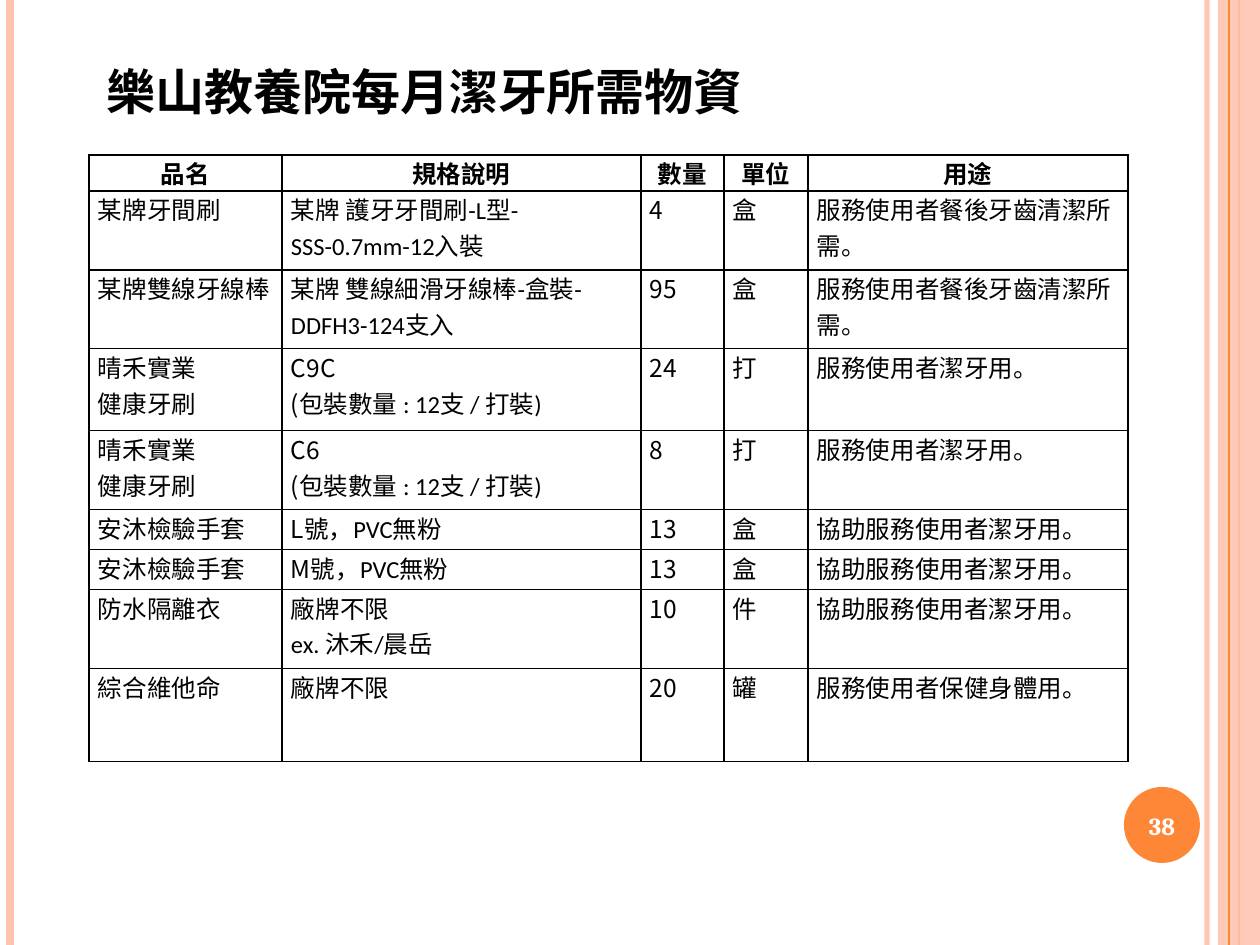
import pptx
import pptx.util
import pptx.dml.color
import pptx.enum.shapes
import pptx.enum.text
import pptx.oxml.ns
import lxml.etree
import dataclasses

ALIGN = pptx.enum.text.PP_ALIGN
ANCHOR = pptx.enum.text.MSO_ANCHOR
SHAPE = pptx.enum.shapes.MSO_SHAPE


@dataclasses.dataclass
class Theme:
    """Colours, fonts and type sizes of the slide."""
    ink: str = "000000"
    paper: str = "FFFFFF"
    peach: str = "FEC3AE"
    orange: str = "FE8637"
    serif: str = "Cambria"
    sans: str = "Calibri"
    cjk: str = "Noto Sans CJK SC"
    head: int = 28
    body: int = 14


def px(count):
    """Turn pixels into EMU."""
    return pptx.util.Emu(round(count * 914400 / 126))


def rgb(code):
    """Turn a hex code into a colour."""
    return pptx.dml.color.RGBColor.from_string(code)


def sub(node, tag, **attrs):
    """Add a child element in a DrawingML namespace."""
    return lxml.etree.SubElement(node, pptx.oxml.ns.qn(tag), **attrs)


def fade(shape, alpha):
    """Give the colour of a shape an opacity in percent."""
    for node in shape._element.spPr.iter(pptx.oxml.ns.qn("a:srgbClr")):
        sub(node, "a:alpha", val=str(alpha * 1000))


class Deck:
    """The style, the current slide and its element builders."""

    def __init__(self, theme):
        """Open a title-only slide."""
        self.theme = theme
        self.show = pptx.Presentation()
        self.show.slide_width, self.show.slide_height = px(1260), px(945)
        self.slide = self.show.slides.add_slide(self.show.slide_layouts[5])

    def font(self, run, face, size, color, bold=False):
        """Format one run."""
        run.font.name, run.font.size = face, pptx.util.Pt(size)
        run.font.bold, run.font.color.rgb = bold, rgb(color)

    def title(self, text, x, y, w, h):
        """Fill and place the title placeholder."""
        box = self.slide.shapes.title
        box.left, box.top, box.width, box.height = map(px, (x, y, w, h))
        frame = box.text_frame
        frame.text = text
        frame.vertical_anchor = ANCHOR.TOP
        frame.paragraphs[0].alignment = ALIGN.LEFT
        self.font(frame.paragraphs[0].runs[0], self.theme.serif,
                  self.theme.head, self.theme.ink, True)

    def rule(self, x, color, width, alpha=100):
        """Draw a full-height vertical line."""
        line = self.slide.shapes.add_connector(
            pptx.enum.shapes.MSO_CONNECTOR.STRAIGHT, px(x), 0, px(x), px(945))
        line.line.color.rgb = rgb(color)
        line.line.width = pptx.util.Pt(width)
        sub(line._element.spPr, "a:effectLst")
        fade(line, alpha)

    def form(self, kind, x, y, w, h, color, alpha=100):
        """Draw a filled shape without outline."""
        shape = self.slide.shapes.add_shape(kind, *map(px, (x, y, w, h)))
        shape.shadow.inherit = False
        shape.fill.solid()
        shape.fill.fore_color.rgb = rgb(color)
        shape.line.fill.background()
        fade(shape, alpha)

    def label(self, text, x, y, w, h):
        """Write a centred bold label."""
        box = self.slide.shapes.add_textbox(*map(px, (x, y, w, h)))
        frame = box.text_frame
        frame.word_wrap = True
        frame.vertical_anchor = ANCHOR.MIDDLE
        frame.text = text
        frame.paragraphs[0].alignment = ALIGN.CENTER
        self.font(frame.paragraphs[0].runs[0], self.theme.serif,
                  self.theme.body, self.theme.paper, True)

    def edge(self, cell):
        """Draw the four borders of a cell."""
        props = cell._tc.get_or_add_tcPr()
        for spot, side in enumerate(("a:lnL", "a:lnR", "a:lnT", "a:lnB")):
            line = lxml.etree.Element(pptx.oxml.ns.qn(side), w="12700")
            sub(sub(line, "a:solidFill"), "a:srgbClr", val=self.theme.ink)
            props.insert(spot, line)

    def cell(self, cell, text, head):
        """Write a cell, with any part before a bar in the CJK font."""
        look = self.theme
        cell.fill.background()
        cell.margin_left = cell.margin_right = px(9)
        cell.margin_top = cell.margin_bottom = 0
        cell.vertical_anchor = ANCHOR.MIDDLE if head else ANCHOR.TOP
        frame = cell.text_frame
        lead, bar, rest = text.partition("|")
        frame.text = lead if bar else text
        for para in frame.paragraphs:
            para.alignment = ALIGN.CENTER if head else ALIGN.LEFT
            for run in para.runs:
                self.font(run, look.cjk if bar else look.sans,
                          look.body, look.ink, head)
        if rest:
            run = frame.paragraphs[-1].add_run()
            run.text = rest
            self.font(run, look.sans, look.body, look.ink)
        self.edge(cell)

    def table(self, rows, x, y, wide, high):
        """Build the bordered table."""
        grid = self.slide.shapes.add_table(
            len(rows), len(wide), px(x), px(y),
            px(sum(wide)), px(sum(high))).table
        grid.first_row = grid.horz_banding = False
        for col, width in zip(grid.columns, wide):
            col.width = px(width)
        for num, (row, height) in enumerate(zip(rows, high)):
            grid.rows[num].height = px(height)
            for spot, text in enumerate(row):
                self.cell(grid.cell(num, spot), text, num == 0)


MEAL = "服務使用者餐後牙齒清潔所需。"
BRUSH = "服務使用者潔牙用。"
HELP = "協助服務使用者潔牙用。"
PACK = "(|包裝數量 : 12支 / 打裝)"
GOODS = [
    ("品名", "規格說明", "數量", "單位", "用途"),
    ("某牌|牙間刷", "某牌 |護牙牙間刷-L型-SSS-0.7mm-12入裝", "4|", "盒", MEAL),
    ("某牌|雙線牙線棒", "某牌 |雙線細滑牙線棒-盒裝-DDFH3-124支入", "95|", "盒", MEAL),
    ("晴禾實業\n健康牙刷", "C9C\n" + PACK, "24|", "打", BRUSH),
    ("晴禾實業\n健康牙刷", "C6\n" + PACK, "8|", "打", BRUSH),
    ("安沐檢驗手套", "L|號，PVC無粉", "13|", "盒", HELP),
    ("安沐檢驗手套", "M|號，PVC無粉", "13|", "盒", HELP),
    ("防水隔離衣", "廠牌不限\nex. 沐禾/晨岳", "10|", "件", HELP),
    ("綜合維他命", "廠牌不限", "20|", "罐", "服務使用者保健身體用。"),
]


def main():
    """Build and save the slide."""
    look = Theme()
    deck = Deck(look)
    deck.rule(1207, look.peach, 3, 93)
    deck.rule(10, look.peach, 4.5)
    deck.rule(1239, look.orange, 1.5)
    deck.form(SHAPE.RECTANGLE, 1218, 0, 42, 945, look.peach, 87)
    deck.rule(1229, look.orange, 0.75)
    deck.form(SHAPE.OVAL, 1124, 787, 76, 76, look.orange)
    deck.table(GOODS, 89, 155, (193, 359, 83, 84, 320),
               (32, 79, 79, 82, 79, 40, 40, 79, 93))
    deck.label("38", 1120, 790, 84, 72)
    deck.title("樂山教養院每月潔牙所需物資", 94, 55, 932, 190)
    deck.show.save("out.pptx")


if __name__ == "__main__":
    main()
